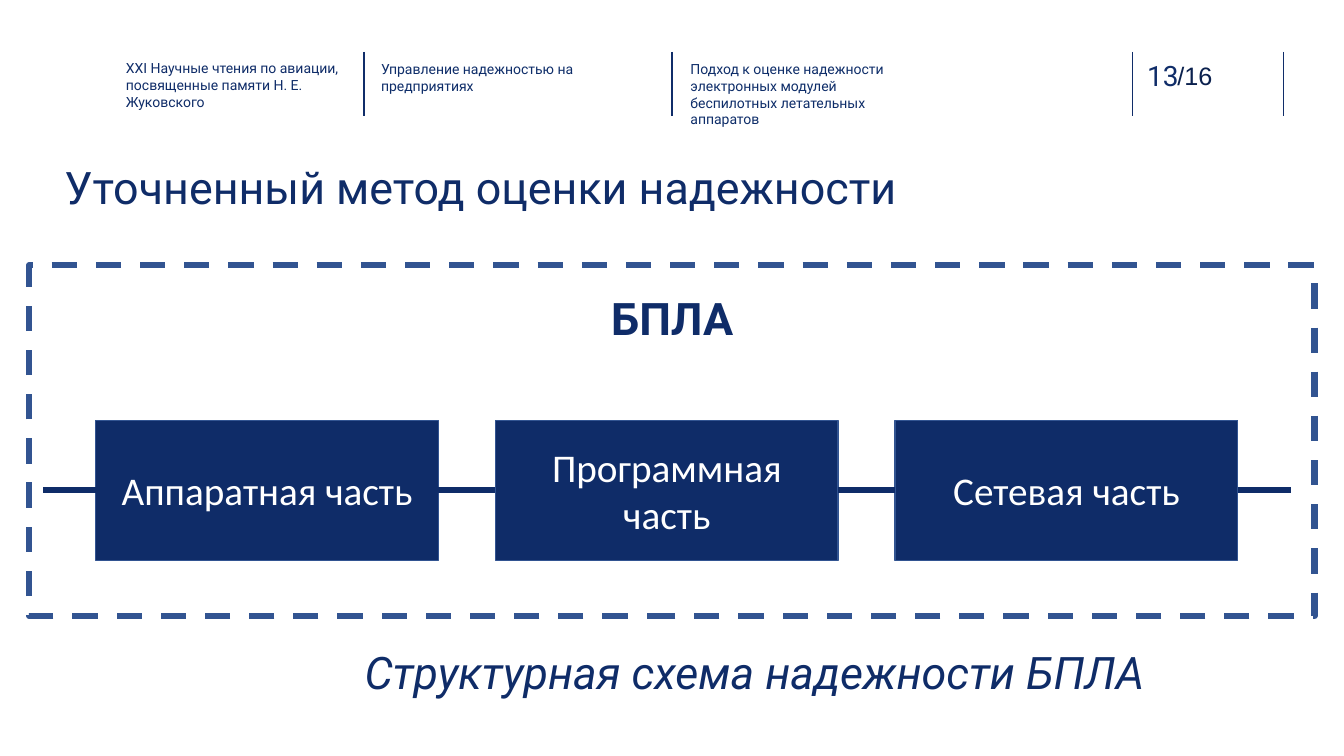
from pptx import Presentation
from pptx.dml.color import RGBColor
from pptx.enum import dml, shapes, text
from pptx.oxml.ns import qn
from pptx.util import Pt
from lxml import etree

COLORS = {"navy": "0F2C68", "rule": "102D69", "header": "0E2D69",
          "total": "0B214E", "border": "325491", "white": "FFFFFF"}

BLOCKS = ["Аппаратная часть", "Программная часть", "Сетевая часть"]
BLOCK_LEFT, BLOCK_TOP, BLOCK_W, BLOCK_H = 68.4, 300.2, 244.8, 100
BLOCK_PITCH = 285.5
CHAIN_START, CHAIN_END = 31, 922.3
RULES_X = [260, 480, 809, 917]
HEADERS = [
    ("XXI Научные чтения по авиации, посвященные памяти Н. Е. Жуковского",
     90, 42.5, 163, "navy"),
    ("Управление надежностью на предприятиях", 272.2, 43.2, 194.4, "header"),
    ("Подход к оценке надежности электронных модулей беспилотных "
     "летательных аппаратов", 493.2, 43.2, 163, "header"),
]


def rgb(name):
    return RGBColor.from_string(COLORS[name])


def write(sp, content, size, color, font="Roboto", align=text.PP_ALIGN.LEFT,
          anchor=text.MSO_ANCHOR.TOP, inset=True, bold=False, italic=False):
    tf = sp.text_frame
    tf.text = content
    tf.word_wrap = True
    tf.auto_size = text.MSO_AUTO_SIZE.NONE
    tf.vertical_anchor = anchor
    if not inset:
        tf.margin_left = tf.margin_right = tf.margin_top = tf.margin_bottom = 0
    p = tf.paragraphs[0]
    p.alignment = align
    p.font.name, p.font.size = font, Pt(size)
    p.font.bold, p.font.italic = bold, italic
    p.font.color.rgb = rgb(color)


def add_label(s, box, content, size, color, **style):
    sp = s.shapes.add_textbox(*map(Pt, box))
    write(sp, content, size, color, **style)


def add_rect(s, box, line_width, fill=None):
    sp = s.shapes.add_shape(shapes.MSO_SHAPE.RECTANGLE, *map(Pt, box))
    sp.shadow.inherit = False
    if fill:
        sp.fill.solid()
        sp.fill.fore_color.rgb = rgb(fill)
    else:
        sp.fill.background()
    sp.line.color.rgb = rgb("border")
    sp.line.width = Pt(line_width)
    return sp


def add_line(s, x1, y1, x2, y2, color, width):
    line = s.shapes.add_connector(shapes.MSO_CONNECTOR.STRAIGHT,
                                  Pt(x1), Pt(y1), Pt(x2), Pt(y2))
    line.line.color.rgb = rgb(color)
    line.line.width = Pt(width)
    etree.SubElement(line._element.spPr, qn("a:effectLst"))
    return line


def add_header(s):
    for x in RULES_X:
        add_line(s, x, 37, x, 83, "rule", 1)
    for content, left, top, width, color in HEADERS:
        add_label(s, (left, top, width, 32.4), content, 10, color, inset=False)
    add_label(s, (819.4, 41.8, 52.6, 24.5), "13", 20, "rule", inset=False)
    add_label(s, (841, 43.2, 77, 31.7), "/16", 18, "total",
              font="Arial", inset=False)


def add_title(s):
    sp = s.shapes.title
    sp.left, sp.top, sp.width, sp.height = map(Pt, (46, 113.8, 666, 61.2))
    write(sp, "Уточненный метод оценки надежности", 32, "navy", inset=False)


def add_chain(s):
    blocks = []
    for i, name in enumerate(BLOCKS):
        left = BLOCK_LEFT + i * BLOCK_PITCH
        sp = add_rect(s, (left, BLOCK_TOP, BLOCK_W, BLOCK_H), 1, "navy")
        write(sp, name, 28, "white", font="Calibri",
              align=text.PP_ALIGN.CENTER, anchor=text.MSO_ANCHOR.MIDDLE)
        blocks.append(sp)

    # Links run from the left end through every block to the right end
    y = BLOCK_TOP + BLOCK_H / 2
    for before, after in zip([None] + blocks, blocks + [None]):
        line = add_line(s, CHAIN_START, y, CHAIN_END, y, "navy", 4.5)
        if before is not None:
            line.begin_connect(before, 3)
        if after is not None:
            line.end_connect(after, 1)


def main():
    prs = Presentation()
    prs.slide_width, prs.slide_height = Pt(960), Pt(540)
    s = prs.slides.add_slide(prs.slide_layouts[5])

    # Header and title
    add_header(s)
    add_title(s)

    # Reliability diagram
    add_chain(s)
    add_label(s, (281.5, 203.8, 397.4, 46), "БПЛА", 32, "navy",
              align=text.PP_ALIGN.CENTER, bold=True)
    frame = add_rect(s, (20.9, 189.4, 918, 250.6), 4.5)
    frame.line.dash_style = dml.MSO_LINE.DASH

    # Caption
    add_label(s, (236.9, 457.2, 604.8, 46), "Структурная схема надежности БПЛА",
              32, "navy", align=text.PP_ALIGN.CENTER, italic=True)

    prs.save("out.pptx")


if __name__ == "__main__":
    main()
